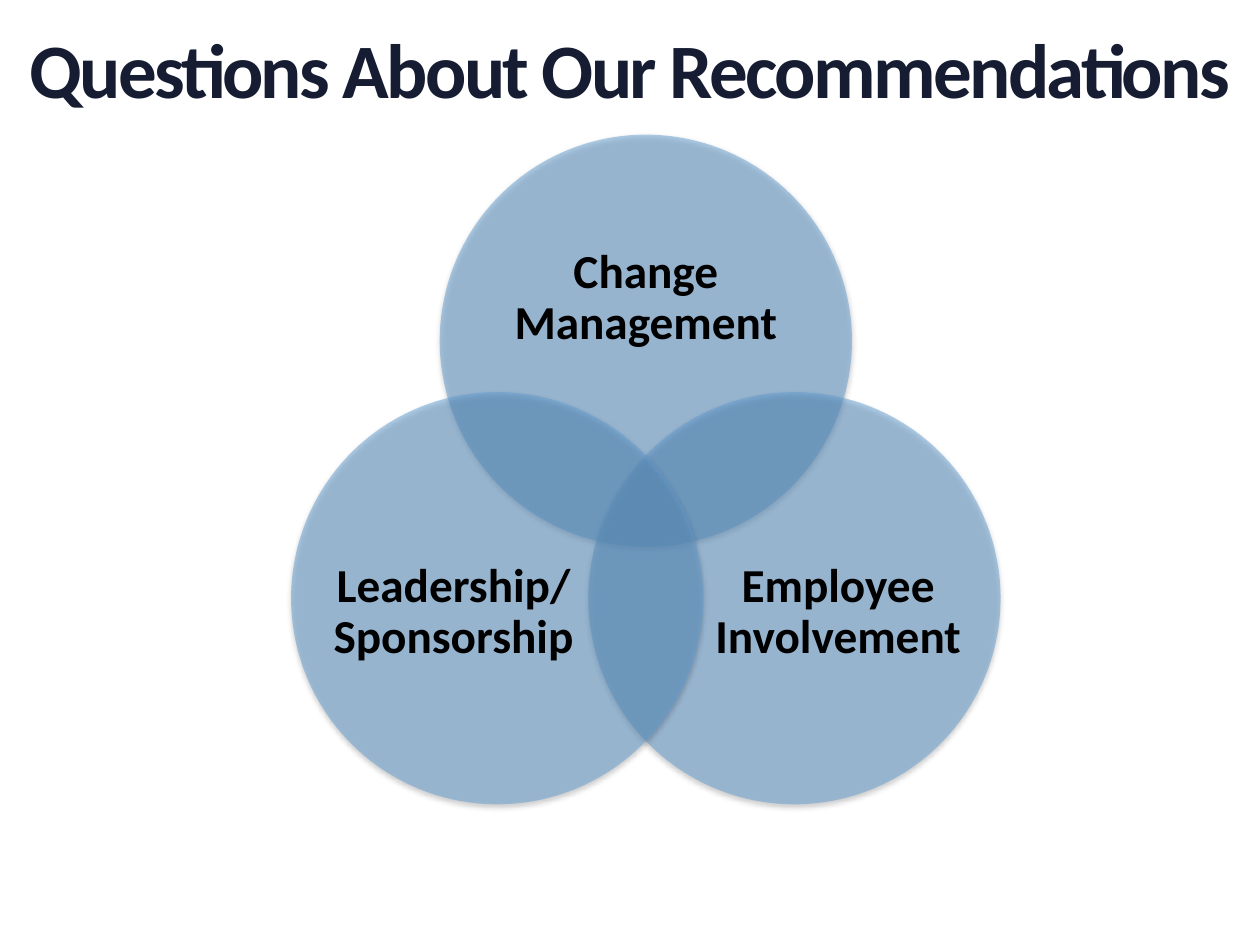
import math
from lxml import etree
from pptx import Presentation
from pptx.dml.color import RGBColor
from pptx.enum import shapes, text
from pptx.oxml import ns
from pptx.util import Cm, Pt

TITLE = "Questions About Our Recommendations"
THEMES = [
    {"label": "Change Management", "angle": -90, "shift": (0, -0.84), "size": (6.1, 3.73)},
    {"label": "Employee Involvement", "angle": 30, "shift": (0.88, 0.29), "size": (4.98, 4.57)},
    {"label": "Leadership/ Sponsorship", "angle": 150, "shift": (-0.88, 0.29), "size": (4.98, 4.57)},
]
CENTER_X, CENTER_Y = 13.02, 10.33
ORBIT, DIAMETER = 3.46, 8.31
TITLE_FONT = {"name": "Calibri", "size": Pt(44), "bold": True}
LABEL_FONT = {"name": "Calibri", "size": Pt(27), "bold": True}
FRAME = {"word_wrap": True, "margin_left": 0, "margin_right": 0, "margin_top": 0, "margin_bottom": 0}


def color(value):
    return RGBColor.from_string(value)


def apply(target, values):
    for name, value in values.items():
        setattr(target, name, value)


def centered_box(x, y, width, height):
    return Cm(x - width / 2), Cm(y - height / 2), Cm(width), Cm(height)


def add_text(slide, words, box, font, ink, anchor):
    frame = slide.shapes.add_textbox(*box).text_frame
    apply(frame, {**FRAME, "vertical_anchor": anchor})
    paragraph = frame.paragraphs[0]
    apply(paragraph, {"alignment": text.PP_ALIGN.CENTER, "line_spacing": 0.9})
    run = paragraph.add_run()
    run.text = words
    apply(run.font, font)
    run.font.color.rgb = color(ink)
    return run


def add_alpha(color_element, percent):
    etree.SubElement(color_element, ns.qn("a:alpha"), val=str(percent * 1000))


def add_circle(slide, box):
    circle = slide.shapes.add_shape(shapes.MSO_SHAPE.OVAL, *box)
    circle.fill.solid()
    circle.fill.fore_color.rgb = color("629DD1")
    circle.line.fill.background()
    circle.shadow.inherit = False
    properties = circle.element.spPr
    add_alpha(properties.find(".//" + ns.qn("a:srgbClr")), 50)
    shadow = etree.SubElement(
        properties.find(ns.qn("a:effectLst")), ns.qn("a:outerShdw"),
        blurRad=str(Pt(3.1)), dist=str(Pt(1.6)), dir="5400000", rotWithShape="0")
    add_alpha(etree.SubElement(shadow, ns.qn("a:srgbClr"), val="000000"), 38)


def main():
    deck = Presentation()
    deck.slide_width, deck.slide_height = Cm(25.4), Cm(19.05)
    slide = deck.slides.add_slide(deck.slide_layouts[6])

    title_box = (0, Cm(0.64), deck.slide_width, Cm(1.7))
    title = add_text(slide, TITLE, title_box, TITLE_FONT, "161D32", text.MSO_ANCHOR.TOP)
    title.font._element.set("spc", "-150")

    for theme in THEMES:
        angle = math.radians(theme["angle"])
        x = CENTER_X + ORBIT * math.cos(angle)
        y = CENTER_Y + ORBIT * math.sin(angle)
        add_circle(slide, centered_box(x, y, DIAMETER, DIAMETER))
        shift_x, shift_y = theme["shift"]
        label_box = centered_box(x + shift_x, y + shift_y, *theme["size"])
        add_text(slide, theme["label"], label_box, LABEL_FONT, "000000", text.MSO_ANCHOR.MIDDLE)

    deck.save("out.pptx")


if __name__ == "__main__":
    main()
